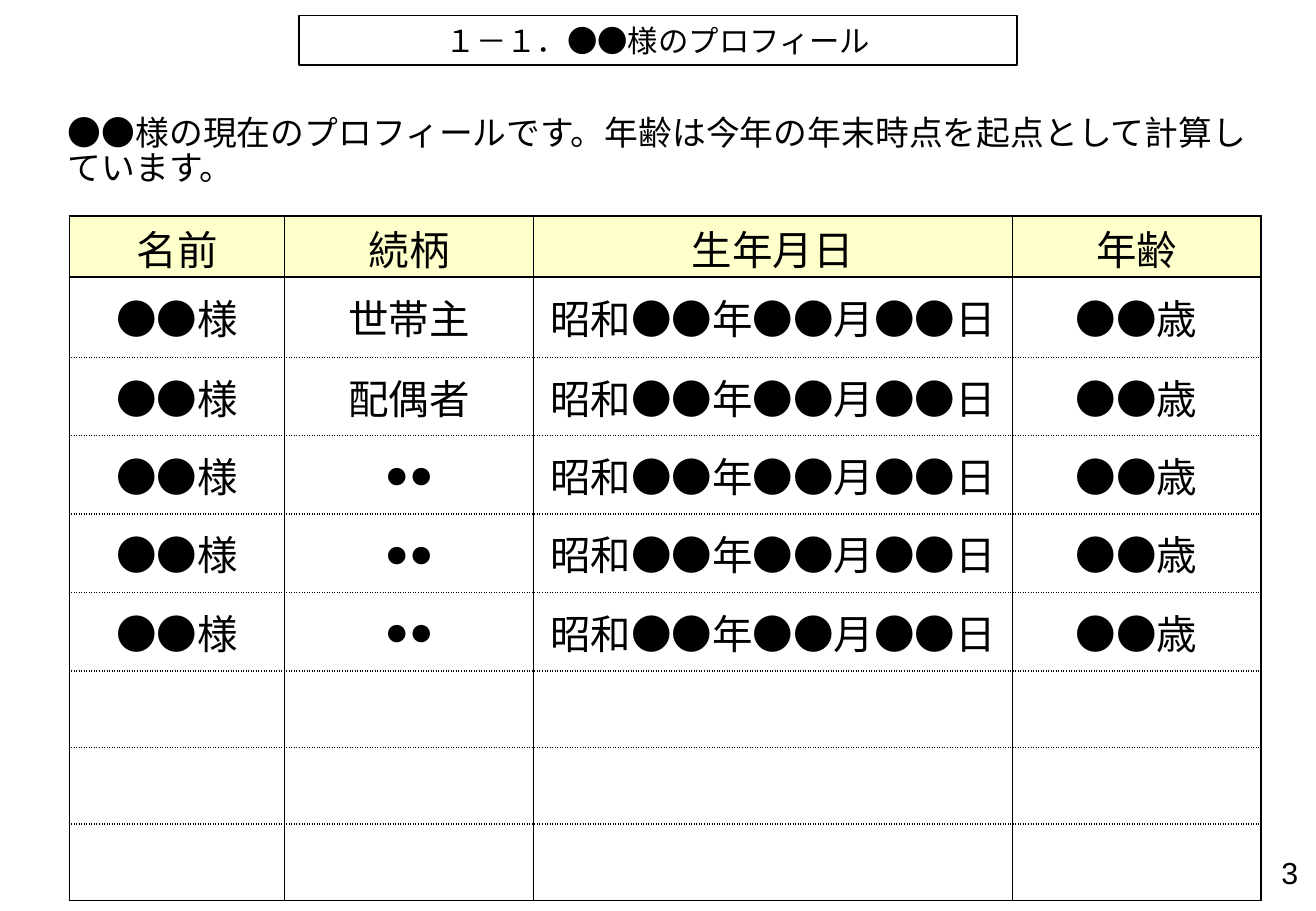
from lxml import etree
from pptx import Presentation
from pptx.dml.color import RGBColor
from pptx.enum.shapes import MSO_SHAPE
from pptx.enum.text import MSO_ANCHOR, PP_ALIGN
from pptx.oxml.ns import qn
from pptx.util import Cm, Pt

BLACK = RGBColor(0, 0, 0)
WHITE = RGBColor(255, 255, 255)
CREAM = RGBColor(255, 255, 204)
LATIN_FONT, JAPANESE_FONT = "Arial", "Noto Sans CJK JP"
RECTANGLE = MSO_SHAPE.RECTANGLE
MIDDLE, TOP = MSO_ANCHOR.MIDDLE, MSO_ANCHOR.TOP
LEFT, CENTER, RIGHT = PP_ALIGN.LEFT, PP_ALIGN.CENTER, PP_ALIGN.RIGHT

BIRTH, AGE, NAME = "昭和●●年●●月●●日", "●●歳", "●●様"
HEADERS = ["名前", "続柄", "生年月日", "年齢"]
RELATIONS = ["世帯主", "配偶者", "●●", "●●", "●●"]
EMPTY_ROWS = 3
COLUMN_WIDTHS = [4.5, 5.2, 10.01, 5.2]
ROW_HEIGHTS = [1.27, 1.68] + [1.64] * 4 + [1.6] * EMPTY_ROWS


def format_text(tf, size, align, latin=LATIN_FONT):
    for p in tf.paragraphs:
        p.alignment = align
        for r in p.runs:
            r.font.size = Pt(size)
            r.font.name = latin
            r.font.color.rgb = BLACK
            east_asian = etree.SubElement(r._r.get_or_add_rPr(), qn("a:ea"))
            east_asian.set("typeface", JAPANESE_FONT)


def add_box(s, x, y, w, h, text, size, align, anchor, outlined=False, latin=LATIN_FONT):
    sp = s.shapes.add_shape(RECTANGLE, Cm(x), Cm(y), Cm(w), Cm(h))
    sp.shadow.inherit = False
    sp.fill.solid()
    sp.fill.fore_color.rgb = WHITE
    if outlined:
        sp.line.color.rgb = BLACK
        sp.line.width = Pt(0.75)
    else:
        sp.line.fill.background()
    tf = sp.text_frame
    tf.word_wrap = True
    tf.vertical_anchor = anchor
    tf.text = text
    format_text(tf, size, align, latin)
    return sp


def add_page_number(s, number):
    sp = s.shapes.add_textbox(Cm(21.95), Cm(17.73), Cm(5.44), Cm(1))
    tf = sp.text_frame
    tf.word_wrap = True
    tf.text = number
    format_text(tf, 18, RIGHT)


def set_borders(cell, top, bottom):
    """Draw solid sides, with the given dash style above and below."""
    tcPr = cell._tc.get_or_add_tcPr()
    sides = [("a:lnL", "solid"), ("a:lnR", "solid"), ("a:lnT", top), ("a:lnB", bottom)]
    for i, (tag, dash) in enumerate(sides):
        ln = etree.Element(qn(tag), w=str(Pt(1)))
        fill = etree.SubElement(ln, qn("a:solidFill"))
        etree.SubElement(fill, qn("a:srgbClr"), val=str(BLACK))
        etree.SubElement(ln, qn("a:prstDash"), val=dash)
        tcPr.insert(i, ln)


def add_profile_table(s, x, y):
    rows = [HEADERS] + [[NAME, relation, BIRTH, AGE] for relation in RELATIONS]
    rows += [[""] * len(HEADERS)] * EMPTY_ROWS
    table = s.shapes.add_table(
        len(rows), len(HEADERS), Cm(x), Cm(y),
        Cm(sum(COLUMN_WIDTHS)), Cm(sum(ROW_HEIGHTS))).table
    for column, width in zip(table.columns, COLUMN_WIDTHS):
        column.width = Cm(width)
    for i, (texts, height) in enumerate(zip(rows, ROW_HEIGHTS)):
        table.rows[i].height = Cm(height)
        for j, text in enumerate(texts):
            cell = table.cell(i, j)
            cell.text = text
            cell.vertical_anchor = MIDDLE
            format_text(cell.text_frame, 24, CENTER)
            cell.fill.solid()
            cell.fill.fore_color.rgb = WHITE if i else CREAM
            if i == 0:
                cell.margin_top, cell.margin_bottom = Cm(0.04), Cm(0)
            set_borders(cell, "solid" if i < 2 else "sysDot",
                        "solid" if i in (0, len(rows) - 1) else "sysDot")


def main():
    prs = Presentation()
    prs.slide_width, prs.slide_height = Cm(27.51), Cm(19.05)
    s = prs.slides.add_slide(prs.slide_layouts[6])
    add_box(s, 6.25, 0.32, 15.01, 1.04, "１－１．●●様のプロフィール",
            18, CENTER, MIDDLE, outlined=True)
    intro = add_box(
        s, 1.17, 2.34, 25.2, 2.2,
        "●●様の現在のプロフィールです。年齢は今年の年末時点を起点として計算しています。",
        20, LEFT, TOP, latin=JAPANESE_FONT)
    intro.text_frame.paragraphs[0].line_spacing = 0.86
    add_profile_table(s, 1.45, 4.52)
    add_page_number(s, "3")
    prs.save("out.pptx")


if __name__ == "__main__":
    main()
